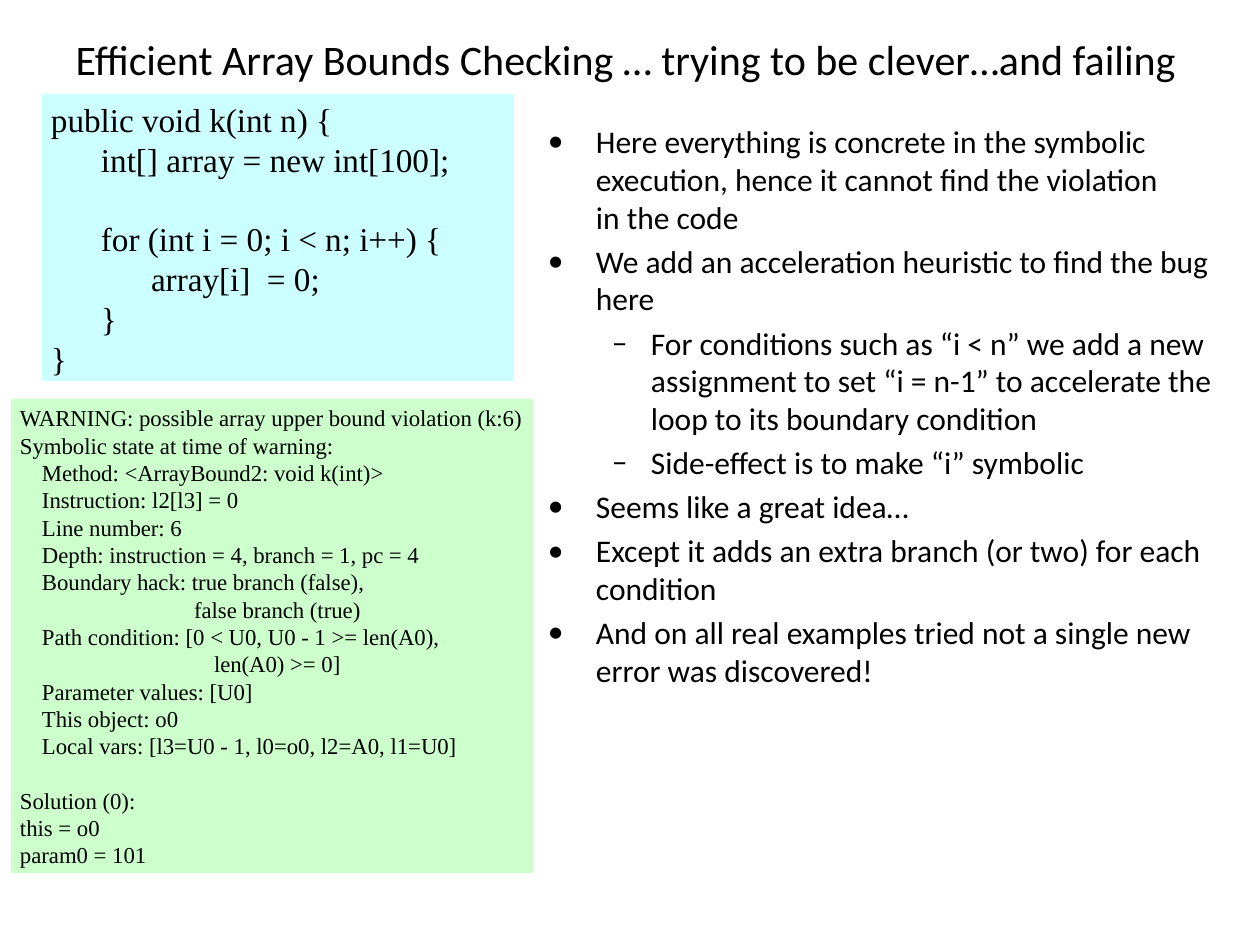
from dataclasses import dataclass

from lxml import etree
from pptx import Presentation
from pptx.dml.color import RGBColor
from pptx.enum.shapes import MSO_SHAPE
from pptx.enum.text import MSO_ANCHOR, MSO_AUTO_SIZE, PP_ALIGN
from pptx.oxml.ns import qn
from pptx.slide import Slide
from pptx.util import Emu, Pt

RECTANGLE = MSO_SHAPE.RECTANGLE
TOP, MIDDLE = MSO_ANCHOR.TOP, MSO_ANCHOR.MIDDLE
LEFT, CENTER = PP_ALIGN.LEFT, PP_ALIGN.CENTER
NO_FIT, GROW = MSO_AUTO_SIZE.NONE, MSO_AUTO_SIZE.SHAPE_TO_FIT_TEXT
PX_PER_INCH = 126
INSET_X, INSET_Y = 9, 5
SERIF_LINE_HEIGHT = 1.19


@dataclass(frozen=True)
class Theme:
    text: str = "000000"
    code_fill: str = "CCFFFF"
    warning_fill: str = "CCFFCC"
    sans: str = "Calibri"
    serif: str = "Times New Roman"
    title_size: float = 24
    body_size: float = 18
    code_size: float = 19
    warning_size: float = 13


@dataclass(frozen=True)
class Line:
    text: str
    indent: int = 0
    gap: float = 0
    hanging: int = 0
    bullet: str = ""
    level: int = 0


@dataclass(frozen=True)
class Panel:
    box: tuple[int, int, int, int]
    lines: list[Line]
    font: str
    size: float
    fill: str = ""
    anchor: MSO_ANCHOR = TOP
    align: PP_ALIGN = LEFT
    wrap: bool = True


THEME = Theme()
CODE_STEP = 50
STATE_INDENT = 22
BODY_GAP = 0.2 * THEME.body_size


def px(length: int) -> Emu:
    return Emu(round(length * 914400 / PX_PER_INCH))


def point(text: str) -> Line:
    return Line(text, 48, BODY_GAP, 48, "•")


def subpoint(text: str) -> Line:
    return Line(text, 103, BODY_GAP, 39, "–", 1)


def state(text: str) -> Line:
    return Line(text, STATE_INDENT)


def draw_line(paragraph, line: Line, panel: Panel) -> None:
    paragraph.text = line.text
    paragraph.alignment = panel.align
    paragraph.level = line.level
    paragraph.space_before = Pt(line.gap)
    properties = paragraph._p.get_or_add_pPr()
    properties.set("marL", str(px(line.indent)))
    properties.set("indent", str(px(-line.hanging)))
    if line.bullet:
        etree.SubElement(properties, qn("a:buFont"), typeface=panel.font)
        etree.SubElement(properties, qn("a:buChar"), char=line.bullet)
    paragraph.font.name = panel.font
    paragraph.font.size = Pt(panel.size)
    paragraph.font.color.rgb = RGBColor.from_string(THEME.text)


def draw_panel(slide: Slide, panel: Panel) -> None:
    box = [px(length) for length in panel.box]
    if panel.fill:
        area = slide.shapes.add_shape(RECTANGLE, *box)
        area.shadow.inherit = False
        area.fill.solid()
        area.fill.fore_color.rgb = RGBColor.from_string(panel.fill)
        area.line.fill.background()
    else:
        area = slide.shapes.add_textbox(*box)
    frame = area.text_frame
    frame.word_wrap = panel.wrap
    frame.auto_size = GROW if panel.fill else NO_FIT
    frame.vertical_anchor = panel.anchor
    frame.margin_left = frame.margin_right = px(INSET_X)
    frame.margin_top = frame.margin_bottom = px(INSET_Y)
    for index, line in enumerate(panel.lines):
        paragraph = frame.add_paragraph() if index else frame.paragraphs[0]
        draw_line(paragraph, line, panel)


TITLE = [Line("Efficient Array Bounds Checking … trying to be clever…and failing")]

FINDINGS = [
    point("Here everything is concrete in the symbolic execution, "
          "hence it cannot find the violation \nin the code"),
    point("We add an acceleration heuristic to find the bug here"),
    subpoint("For conditions such as “i < n” we add a new assignment to set "
             "“i = n-1” to accelerate the loop to its boundary condition"),
    subpoint("Side-effect is to make “i” symbolic"),
    point("Seems like a great idea…"),
    point("Except it adds an extra branch (or two) for each condition"),
    point("And on all real examples tried not a single new error was discovered!"),
]

CODE = [
    Line("public void k(int n) {"),
    Line("int[] array = new int[100];", CODE_STEP),
    Line("for (int i = 0; i < n; i++) {", CODE_STEP, SERIF_LINE_HEIGHT * THEME.code_size),
    Line("array[i]  = 0;", 2 * CODE_STEP),
    Line("}", CODE_STEP),
    Line("}"),
]

WARNING = [
    Line("WARNING: possible array upper bound violation (k:6)"),
    Line("Symbolic state at time of warning:"),
    state("Method: <ArrayBound2: void k(int)>"),
    state("Instruction: l2[l3] = 0"),
    state("Line number: 6"),
    state("Depth: instruction = 4, branch = 1, pc = 4"),
    state("Boundary hack: true branch (false),"),
    Line("false branch (true)", 174),
    state("Path condition: [0 < U0, U0 - 1 >= len(A0),"),
    Line("len(A0) >= 0]", 194),
    state("Parameter values: [U0]"),
    state("This object: o0"),
    state("Local vars: [l3=U0 - 1, l0=o0, l2=A0, l1=U0]"),
    Line("Solution (0):", gap=SERIF_LINE_HEIGHT * THEME.warning_size),
    Line("this = o0"),
    Line("param0 = 101"),
]

PANELS = [
    Panel((59, 0, 1134, 118), TITLE, THEME.sans, THEME.title_size,
          anchor=MIDDLE, align=CENTER),
    Panel((539, 117, 690, 630), FINDINGS, THEME.sans, THEME.body_size),
    Panel((42, 94, 472, 287), CODE, THEME.serif, THEME.code_size, THEME.code_fill),
    Panel((11, 399, 522, 474), WARNING, THEME.serif, THEME.warning_size,
          THEME.warning_fill, wrap=False),
]


def main() -> None:
    deck = Presentation()
    deck.slide_width, deck.slide_height = px(1260), px(945)
    slide = deck.slides.add_slide(deck.slide_layouts[6])
    for panel in PANELS:
        draw_panel(slide, panel)
    deck.save("out.pptx")


if __name__ == "__main__":
    main()
